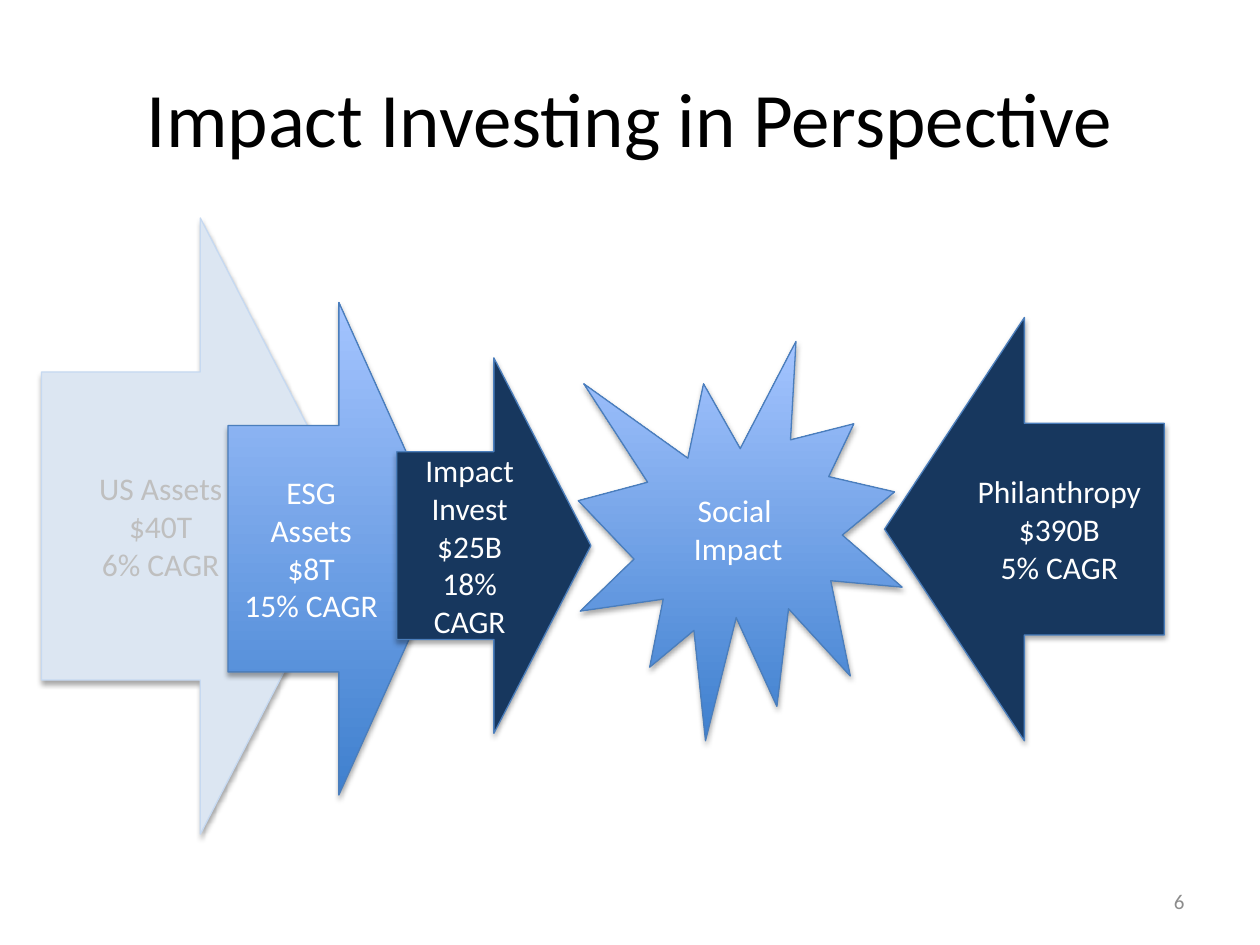
from lxml import etree
from pptx import Presentation, util as u
from pptx.dml.color import RGBColor
from pptx.enum import shapes, text
from pptx.oxml.ns import qn

THEME = {
    "font": "Calibri",
    "title_size": 44, "label_size": 18, "number_size": 12,
    "title": "000000", "number": "8C8C8C",
    "white": "FFFFFF", "muted": "BFBFBF",
    "pale": "DCE6F2", "pale_line": "C6D9F1",
    "navy": "17375E", "line": "4B7EBC",
    "gradient": ("3F80CE", "A4C4FF"),  # bottom to top
    "shadow": "000000",
}

TITLE = "Impact Investing in Perspective"
PAGE_NUMBER = "6"
RIGHT = shapes.MSO_SHAPE.RIGHT_ARROW
LEFT = shapes.MSO_SHAPE.LEFT_ARROW
BURST = shapes.MSO_SHAPE.EXPLOSION1

# Back to front: kind, (left, top, width, height), fill, line, text colour, lines
FORCES = [
    (RIGHT, (0.33, 1.73, 2.52, 4.89), "pale", "pale_line", "muted",
     ["US Assets", "$40T", "6% CAGR"]),
    (RIGHT, (1.81, 2.4, 1.76, 3.91), "gradient", "line", "white",
     ["ESG", "Assets", "$8T", "15% CAGR"]),
    (RIGHT, (3.15, 2.84, 1.54, 2.98), "navy", "line", "white",
     ["Impact Invest", "$25B", "18% CAGR"]),
    (LEFT, (7.02, 2.52, 2.22, 3.36), "navy", "line", "white",
     ["Philanthropy", "$390B", "5% CAGR"]),
    (BURST, (4.59, 2.71, 2.57, 3.17), "gradient", "line", "white",
     ["Social ", "Impact"]),
]


def color(name):
    return RGBColor.from_string(THEME[name])


def write(shape, lines, size, color_name, align):
    frame = shape.text_frame
    frame.text = "\n".join(lines)
    frame.word_wrap = True
    frame.vertical_anchor = text.MSO_ANCHOR.MIDDLE
    for para in frame.paragraphs:
        para.alignment = align
        for span in para.runs:
            span.font.name = THEME["font"]
            span.font.size = u.Pt(THEME[size])
            span.font.color.rgb = color(color_name)


def paint(shape, fill_name):
    if fill_name != "gradient":
        shape.fill.solid()
        shape.fill.fore_color.rgb = color(fill_name)
        return
    shape.fill.gradient()
    shape.fill.gradient_angle = 90
    for position, (stop, value) in enumerate(
            zip(shape.fill.gradient_stops, THEME["gradient"])):
        stop.position = position
        stop.color.rgb = RGBColor.from_string(value)


def add_shadow(shape):
    shape.shadow.inherit = False
    effects = shape._element.spPr.find(qn("a:effectLst"))
    shadow = etree.SubElement(
        effects, qn("a:outerShdw"), blurRad=str(u.Pt(3.1)),
        dist=str(u.Pt(1.8)), dir="5400000", rotWithShape="0")
    tint = etree.SubElement(shadow, qn("a:srgbClr"), val=THEME["shadow"])
    etree.SubElement(tint, qn("a:alpha"), val="35000")


def main():
    deck = Presentation()
    deck.slide_width, deck.slide_height = u.Inches(10), u.Inches(7.5)
    page = deck.slides.add_slide(deck.slide_layouts[5])

    # Title
    title = page.shapes.title
    title.left, title.top, title.width, title.height = map(
        u.Inches, (0.5, 0.3, 9, 1.25))
    write(title, [TITLE], "title_size", "title", text.PP_ALIGN.CENTER)

    # Page number
    number = page.shapes.add_textbox(*map(u.Inches, (7.17, 6.95, 2.33, 0.4)))
    write(number, [PAGE_NUMBER], "number_size", "number", text.PP_ALIGN.RIGHT)

    # Arrows and burst
    for kind, place, fill, line, ink, lines in FORCES:
        shape = page.shapes.add_shape(kind, *map(u.Inches, place))
        paint(shape, fill)
        shape.line.color.rgb = color(line)
        shape.line.width = u.Pt(0.75)
        add_shadow(shape)
        write(shape, lines, "label_size", ink, text.PP_ALIGN.CENTER)

    deck.save("out.pptx")


if __name__ == "__main__":
    main()
